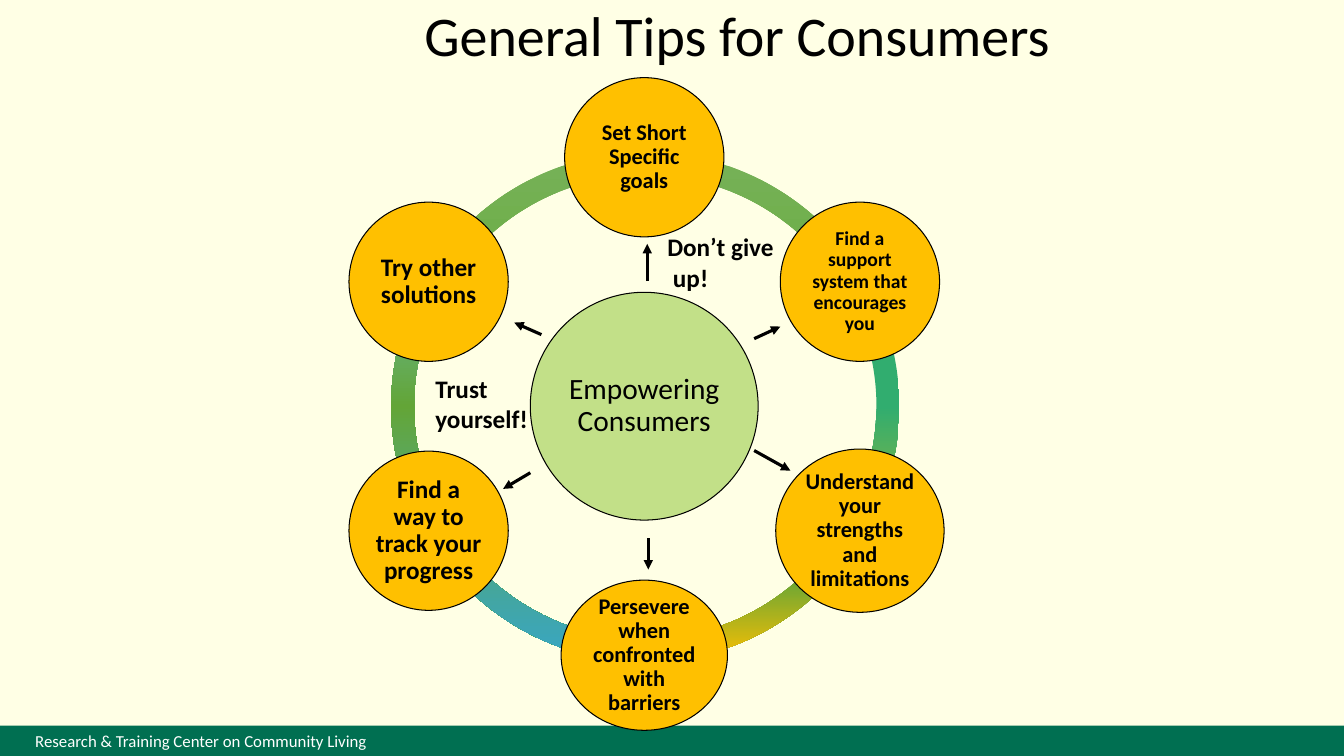
from dataclasses import dataclass
from math import cos, radians, sin

from lxml.etree import SubElement
from pptx import Presentation
from pptx.dml.color import RGBColor
from pptx.enum.shapes import MSO_CONNECTOR as CONN, MSO_SHAPE as SHAPE
from pptx.enum.text import MSO_ANCHOR as ANCHOR, MSO_AUTO_SIZE as FIT, PP_ALIGN as ALIGN
from pptx.oxml.ns import qn
from pptx.util import Emu, Pt

PX = 9144
FONT = "Calibri"
BLACK = RGBColor(0x00, 0x00, 0x00)
WHITE = RGBColor(0xFF, 0xFF, 0xFF)
CREAM = RGBColor(0xFF, 0xFF, 0xE5)
PINE = RGBColor(0x00, 0x6F, 0x51)
LIME = RGBColor(0xC2, 0xE0, 0x88)
AMBER = RGBColor(0xFF, 0xC0, 0x00)
LEAF = RGBColor(0x63, 0xA5, 0x37)
MOSS_LIGHT = RGBColor(0x76, 0xB1, 0x58)
MOSS = RGBColor(0x62, 0xAB, 0x31)
MOSS_DARK = RGBColor(0x56, 0x9C, 0x27)
SKY_LIGHT = RGBColor(0x6B, 0xCA, 0xFC)
SKY = RGBColor(0x40, 0xB0, 0xE5)
AQUA_LIGHT = RGBColor(0x68, 0xBB, 0xD5)
AQUA = RGBColor(0x38, 0xA6, 0xC5)
MINT = RGBColor(0x30, 0xB8, 0x97)
JADE = RGBColor(0x31, 0xAD, 0x6F)
JADE_DARK = RGBColor(0x27, 0x9E, 0x63)

CENTER_X, CENTER_Y, RADIUS = 639, 403, 247
RING_SIZE = 504
RING_THICKNESS = 0.045


@dataclass
class Arc:
    x: int
    y: int
    start: float
    end: float
    stops: list[tuple[int, RGBColor]]


@dataclass
class Tip:
    text: str
    size: int
    inset: int = 2
    w: int = 158
    h: int = 158


@dataclass
class Note:
    text: str
    x: int
    y: int
    w: int
    h: int


@dataclass
class Arrow:
    x1: int
    y1: int
    x2: int
    y2: int


MOSS_STOPS = [(0, MOSS_LIGHT), (50, MOSS), (100, MOSS_DARK)]
ARCS = [
    Arc(388, 151, 210, 270, MOSS_STOPS),
    Arc(388, 151, 150, 210, [(0, SKY_LIGHT), (50, LEAF), (100, SKY)]),
    Arc(389, 153, 90.34, 150.68, [(0, AQUA_LIGHT), (50, LEAF), (100, AQUA)]),
    Arc(386, 153, 29.32, 89.66, [(83, LEAF), (100, AMBER), (100, LEAF), (100, MINT)]),
    Arc(388, 151, 330, 30, [(50, JADE), (100, AMBER), (100, JADE_DARK)]),
    Arc(388, 151, 270, 330, MOSS_STOPS),
]
TIPS = [
    Tip("Set Short Specific goals", 16),
    Tip("Find a support system that encourages you", 14),
    Tip("Understand your strengths and limitations", 16, w=167, h=162),
    Tip("Persevere when confronted with barriers", 16, w=165, h=149),
    Tip("Find a way to track your progress", 18, inset=3),
    Tip("Try other solutions", 18, inset=3),
]
HUB = Tip("Empowering Consumers", 21, inset=3, w=226, h=226)
NOTES = [
    Note("Don’t give\n up!", 652, 225, 132, 71),
    Note("Trust\nyourself!", 422, 365, 114, 71),
]
ARROWS = [
    Arrow(748, 447, 784, 467),
    Arrow(748, 336, 774, 324),
    Arrow(642, 279, 642, 242),
    Arrow(537, 332, 510, 320),
    Arrow(526, 469, 499, 485),
    Arrow(643, 534, 643, 565),
]


def px(n: float) -> Emu:
    return Emu(round(n * PX))


def format_text(sp, size: int, color: RGBColor = BLACK, bold: bool = False) -> None:
    for p in sp.text_frame.paragraphs:
        for r in p.runs:
            r.font.name = FONT
            r.font.size = Pt(size)
            r.font.bold = bold
            r.font.color.rgb = color


def add_plain(slide, kind: SHAPE, x: float, y: float, w: int, h: int):
    sp = slide.shapes.add_shape(kind, px(x), px(y), px(w), px(h))
    sp.shadow.inherit = False
    sp.line.fill.background()
    return sp


def add_title(slide, text: str) -> None:
    sp = slide.shapes.title
    sp.left, sp.top, sp.width, sp.height = px(411), px(-4), px(647), px(77)
    tf = sp.text_frame
    tf.text = text
    tf.word_wrap = False
    tf.auto_size = FIT.SHAPE_TO_FIT_TEXT
    tf.vertical_anchor = ANCHOR.TOP
    tf.paragraphs[0].alignment = ALIGN.LEFT
    format_text(sp, 40)


def add_footer(slide, text: str) -> None:
    sp = add_plain(slide, SHAPE.RECTANGLE, 0, 720, 1333, 30)
    sp.fill.solid()
    sp.fill.fore_color.rgb = PINE
    tf = sp.text_frame
    tf.text = text
    tf.margin_left = px(35)
    tf.paragraphs[0].alignment = ALIGN.LEFT
    format_text(sp, 12, WHITE)


def add_arc(slide, arc: Arc) -> None:
    sp = add_plain(slide, SHAPE.BLOCK_ARC, arc.x, arc.y, RING_SIZE, RING_SIZE)
    sp.adjustments[0] = arc.start * 0.6
    sp.adjustments[1] = arc.end * 0.6
    sp.adjustments[2] = RING_THICKNESS
    sp.fill.gradient()
    sp.fill.gradient_angle = 270
    stops = sp.element.spPr.find(qn("a:gradFill")).find(qn("a:gsLst"))
    for stop in list(stops):
        stops.remove(stop)
    for pos, color in arc.stops:
        stop = SubElement(stops, qn("a:gs"), pos=str(pos * 1000))
        SubElement(stop, qn("a:srgbClr"), val=str(color))


def add_circle(slide, tip: Tip, cx: float, cy: float, fill: RGBColor, bold: bool) -> None:
    sp = add_plain(slide, SHAPE.OVAL, cx - tip.w / 2, cy - tip.h / 2, tip.w, tip.h)
    sp.fill.solid()
    sp.fill.fore_color.rgb = fill
    sp.line.color.rgb = BLACK
    sp.line.width = Pt(0.75)
    tf = sp.text_frame
    tf.text = tip.text
    tf.word_wrap = True
    tf.vertical_anchor = ANCHOR.MIDDLE
    tf.margin_left = tf.margin_right = tf.margin_top = tf.margin_bottom = px(tip.inset)
    p = tf.paragraphs[0]
    p.alignment = ALIGN.CENTER
    p.line_spacing = 0.9
    format_text(sp, tip.size, bold=bold)


def add_note(slide, note: Note) -> None:
    sp = slide.shapes.add_textbox(px(note.x), px(note.y), px(note.w), px(note.h))
    tf = sp.text_frame
    tf.text = note.text
    tf.word_wrap = False
    tf.auto_size = FIT.SHAPE_TO_FIT_TEXT
    format_text(sp, 18, bold=True)


def add_arrow(slide, a: Arrow) -> None:
    sp = slide.shapes.add_connector(CONN.STRAIGHT, px(a.x1), px(a.y1), px(a.x2), px(a.y2))
    sp.line.color.rgb = BLACK
    sp.line.width = Pt(2.25)
    SubElement(sp.line._get_or_add_ln(), qn("a:tailEnd"), type="triangle")
    SubElement(sp._element.spPr, qn("a:effectLst"))


def main() -> None:
    prs = Presentation()
    prs.slide_width, prs.slide_height = px(1333), px(750)
    slide = prs.slides.add_slide(prs.slide_layouts[5])
    slide.background.fill.solid()
    slide.background.fill.fore_color.rgb = CREAM
    add_title(slide, "General Tips for Consumers")
    add_footer(slide, "Research & Training Center on Community Living")
    for arc in ARCS:
        add_arc(slide, arc)
    add_circle(slide, HUB, CENTER_X, CENTER_Y, LIME, False)
    for i, tip in enumerate(TIPS):
        angle = radians(i * 360 / len(TIPS) - 90)
        cx, cy = CENTER_X + RADIUS * cos(angle), CENTER_Y + RADIUS * sin(angle)
        add_circle(slide, tip, cx, cy, AMBER, True)
    for note in NOTES:
        add_note(slide, note)
    for arrow in ARROWS:
        add_arrow(slide, arrow)
    prs.save("out.pptx")


if __name__ == "__main__":
    main()
